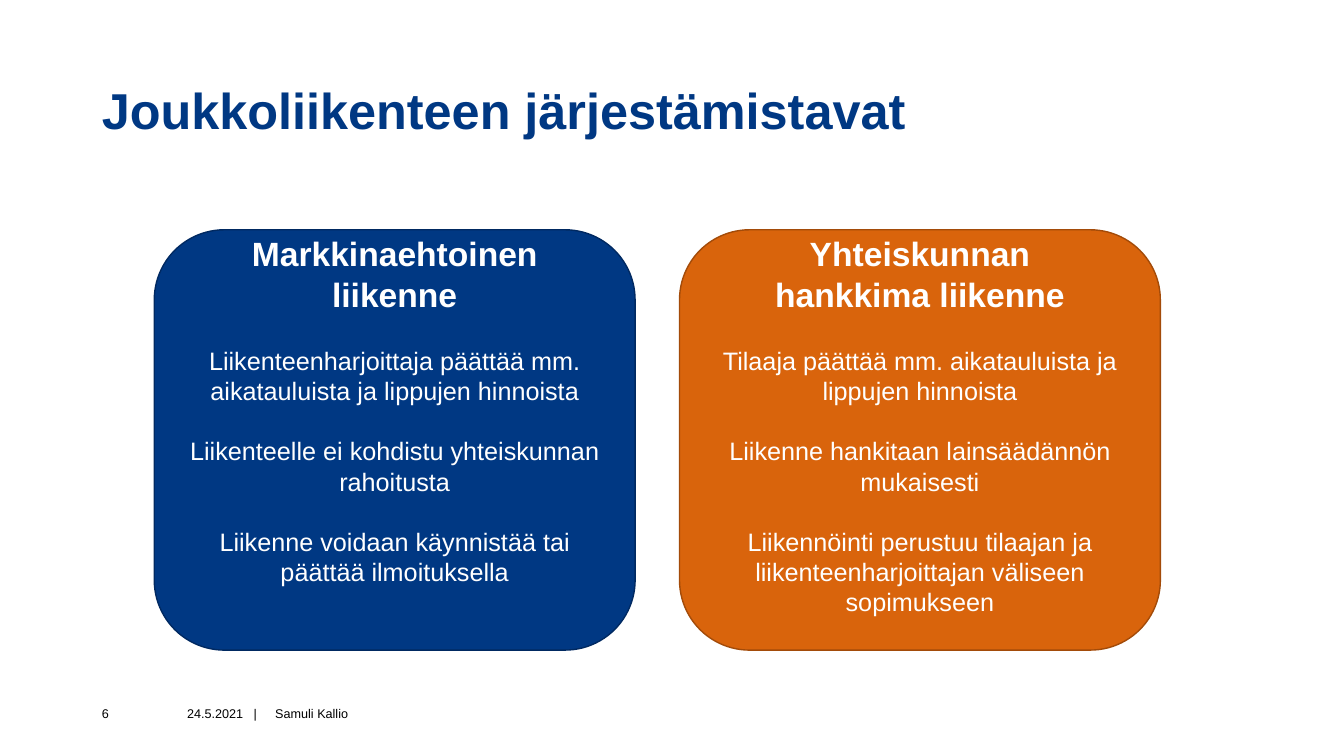
from dataclasses import dataclass

from lxml.etree import SubElement
from pptx import Presentation
from pptx.dml.color import RGBColor as Color
from pptx.enum.shapes import MSO_SHAPE as Shape
from pptx.enum.text import MSO_ANCHOR as Anchor, MSO_AUTO_SIZE as Fit, PP_ALIGN as Align
from pptx.oxml.ns import qn
from pptx.util import Inches, Length, Pt

WIDE, HIGH = Inches(13.33), Inches(7.5)
NAVY = Color(0x00, 0x38, 0x83)
NIGHT = Color(0x00, 0x29, 0x61)
AMBER = Color(0xD9, 0x64, 0x0C)
RUST = Color(0xA3, 0x4B, 0x09)
WHITE = Color(0xFF, 0xFF, 0xFF)
BLACK = Color(0x00, 0x00, 0x00)
FONT = "Arial"

HEAD_LINE, BODY_LINE = Pt(29.3), Pt(21.6)
SIDE, EDGE = Inches(0.12), Inches(0.05)
BAR_TAB = Inches(0.66)
CARD_LEFT, CARD_STEP = 11.48, 39.08
CARD_TOP, CARD_WIDE, CARD_HIGH = 30.4, 35.78, 55.6
FOOT_TOP, FOOT_HIGH = 92.93, 2.93


@dataclass(frozen=True)
class Label:
    text: str
    left: float
    top: float
    width: float
    height: float
    size: float = 9
    color: Color = BLACK
    bold: bool = False
    pitch: float = 1.0


@dataclass(frozen=True)
class Card:
    heads: tuple[str, ...]
    points: tuple[str, ...]
    fill: Color
    line: Color
    tail: int


LABELS = (
    Label("Joukkoliikenteen järjestämistavat", 7.58, 6.8, 87.25, 16.27, 36, NAVY, True, 0.9),
    Label("6", 7.58, FOOT_TOP, 3.98, FOOT_HIGH),
    Label("24.5.2021\t|", 13.92, FOOT_TOP, 6.04, FOOT_HIGH),
    Label("Samuli Kallio", 20.48, FOOT_TOP, 33.76, FOOT_HIGH),
)

CARDS = (
    Card(
        ("Markkinaehtoinen liikenne",),
        (
            "Liikenteenharjoittaja päättää mm. aikatauluista ja lippujen hinnoista",
            "Liikenteelle ei kohdistu yhteiskunnan rahoitusta",
            "Liikenne voidaan käynnistää tai päättää ilmoituksella",
        ),
        NAVY, NIGHT, 2,
    ),
    Card(
        ("Yhteiskunnan", "hankkima liikenne"),
        (
            "Tilaaja päättää mm. aikatauluista ja lippujen hinnoista",
            "Liikenne hankitaan lainsäädännön mukaisesti",
            "Liikennöinti perustuu tilaajan ja liikenteenharjoittajan väliseen sopimukseen",
        ),
        AMBER, RUST, 1,
    ),
)


def place(left: float, top: float, width: float, height: float) -> tuple[Length, ...]:
    shares = ((left, WIDE), (top, HIGH), (width, WIDE), (height, HIGH))
    return tuple(Length(round(share * full / 100)) for share, full in shares)


def setup(frame, side: int, top: int, base: int) -> None:
    frame.word_wrap = True
    frame.auto_size = Fit.NONE
    frame.vertical_anchor = Anchor.MIDDLE
    frame.margin_left = frame.margin_right = side
    frame.margin_top, frame.margin_bottom = top, base


def write(para, text: str, size: float, color: Color, bold: bool) -> None:
    run = para.add_run()
    run.text = text
    font = run.font
    font.name, font.size, font.bold = FONT, Pt(size), bold
    font.color.rgb = color


def add_label(slide, label: Label) -> None:
    box = slide.shapes.add_textbox(*place(label.left, label.top, label.width, label.height))
    setup(box.text_frame, 0, 0, 0)
    para = box.text_frame.paragraphs[0]
    para.line_spacing = label.pitch
    if "\t" in label.text:
        tabs = SubElement(para._p.get_or_add_pPr(), qn("a:tabLst"))
        SubElement(tabs, qn("a:tab"), pos=str(int(BAR_TAB)), algn="l")
    write(para, label.text, label.size, label.color, label.bold)


def add_card(slide, card: Card, index: int) -> None:
    spot = place(CARD_LEFT + index * CARD_STEP, CARD_TOP, CARD_WIDE, CARD_HIGH)
    shape = slide.shapes.add_shape(Shape.ROUNDED_RECTANGLE, *spot)
    shape.shadow.inherit = False
    shape.fill.solid()
    shape.fill.fore_color.rgb = card.fill
    shape.line.color.rgb = card.line
    shape.line.width = Pt(1)
    frame = shape.text_frame
    setup(frame, SIDE, EDGE, EDGE + card.tail * BODY_LINE)
    for row, text in enumerate(card.heads + card.points):
        head = row < len(card.heads)
        para = frame.add_paragraph() if row else frame.paragraphs[0]
        para.alignment = Align.CENTER
        para.line_spacing = HEAD_LINE if head else BODY_LINE
        if not head:
            para.space_before = BODY_LINE
        write(para, text, 24 if head else 18, WHITE, head)


def main() -> None:
    deck = Presentation()
    deck.slide_width, deck.slide_height = WIDE, HIGH
    slide = deck.slides.add_slide(deck.slide_layouts[6])
    for label in LABELS:
        add_label(slide, label)
    for index, card in enumerate(CARDS):
        add_card(slide, card, index)
    deck.save("out.pptx")


if __name__ == "__main__":
    main()
